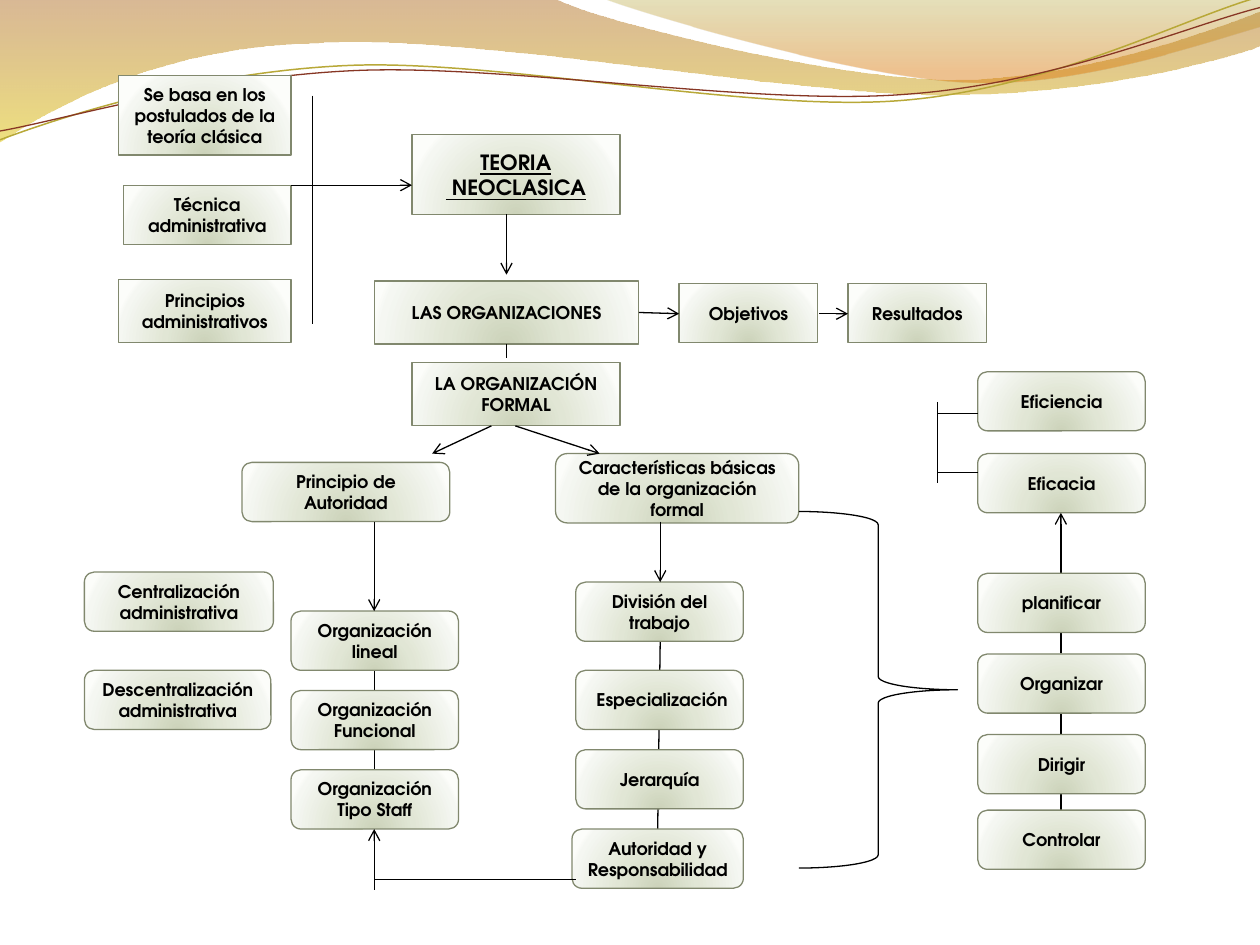
from lxml import etree
from pptx import Presentation
from pptx.dml.color import RGBColor
from pptx.enum.shapes import MSO_CONNECTOR, MSO_SHAPE
from pptx.enum.text import MSO_ANCHOR, MSO_AUTO_SIZE, PP_ALIGN
from pptx.oxml import parse_xml
from pptx.oxml.ns import qn
from pptx.util import Inches, Pt

RECT, ROUNDED, BRACE = MSO_SHAPE.RECTANGLE, MSO_SHAPE.ROUNDED_RECTANGLE, MSO_SHAPE.RIGHT_BRACE
STRAIGHT = MSO_CONNECTOR.STRAIGHT
MIDDLE, CENTER, NO_AUTOFIT = MSO_ANCHOR.MIDDLE, PP_ALIGN.CENTER, MSO_AUTO_SIZE.NONE
FONT = "TeX Gyre Adventor"
NS = 'xmlns:a="http://schemas.openxmlformats.org/drawingml/2006/main"'
DOWNWARD = '<a:lin ang="5400000" scaled="0"/>'
FROM_BELOW = '<a:path path="circle"><a:fillToRect l="50000" t="130000" r="50000" b="-30000"/></a:path>'
BOX_STOPS = [(0, "CCD3BA", 100), (43, "E1E6D5", 100), (93, "F5F7F2", 100), (100, "FCFDFA", 100)]


def fill_gradient(shape, stops, direction):
    shape.fill.background()
    stop_xml = "".join(
        f'<a:gs pos="{pos * 1000}"><a:srgbClr val="{color}"><a:alpha val="{alpha * 1000}"/></a:srgbClr></a:gs>'
        for pos, color, alpha in stops)
    no_fill = shape._element.spPr.find(qn("a:noFill"))
    no_fill.getparent().replace(no_fill, parse_xml(
        f'<a:gradFill {NS} rotWithShape="1"><a:gsLst>{stop_xml}</a:gsLst>{direction}</a:gradFill>'))


def format_box(shape, paragraphs, size, underline=False):
    fill_gradient(shape, BOX_STOPS, FROM_BELOW)
    shape.line.color.rgb = RGBColor.from_string("81886E")
    shape.line.width = Pt(0.75)
    shape.shadow.inherit = False
    frame = shape.text_frame
    frame.word_wrap = True
    frame.auto_size = NO_AUTOFIT
    frame.vertical_anchor = MIDDLE
    for index, text in enumerate(paragraphs):
        paragraph = frame.add_paragraph() if index else frame.paragraphs[0]
        paragraph.alignment = CENTER
        run = paragraph.add_run()
        run.text = text
        run.font.name = FONT
        run.font.size = Pt(size)
        run.font.bold = True
        run.font.underline = underline
        run.font.color.rgb = RGBColor.from_string("000000")


prs = Presentation()
prs.slide_width, prs.slide_height = Inches(10), Inches(7.5)
slide = prs.slides.add_slide(prs.slide_layouts[5])
shapes = slide.shapes

left_wave = [
    (0, 0), (4.4, -0.01),
    (4.76, 0.17, 6.64, 0.63, 7.58, 0.63), (8.53, 0.63, 9.58, 0.26, 10, 0.09), (10.01, 0.36),
    (9.83, 0.44, 8.7, 0.76, 7.46, 0.75), (6.22, 0.75, 3.82, 0.28, 2.57, 0.34),
    (1.29, 0.36, 0.46, 0.83, -0.01, 1.13)]
right_wave = [(4.79, -0.01), (5.09, 0.11, 6.82, 0.62, 7.69, 0.65), (8.56, 0.69, 9.61, 0.32, 10, 0.21), (10, 0)]
olive_curve = [(0, 1.11), (0.48, 0.93, 1.58, 0.57, 2.77, 0.52), (3.95, 0.47, 5.93, 0.89, 7.13, 0.8),
               (8.33, 0.71, 9.38, 0.15, 9.98, -0.02)]
red_curve = [(0, 1.04), (0.47, 0.96, 1.64, 0.61, 2.83, 0.56), (4.03, 0.51, 5.97, 0.84, 7.17, 0.75),
             (8.36, 0.67, 9.41, 0.21, 10, 0.06)]
waves = [
    (left_wave, [(0, "AB6415", 45), (100, "E1C716", 55)], None, 0),
    (right_wave, [(0, "AA991F", 30), (80, "DB780A", 45)], None, 0),
    (olive_curve, None, "B8A838", 0.85),
    (red_curve, None, "873624", 0.75),
]
for steps, stops, color, width in waves:
    corners = [(Inches(step[i]), Inches(step[i + 1])) for step in steps for i in range(0, len(step), 2)]
    builder = shapes.build_freeform(*corners[0])
    builder.add_line_segments(corners[1:], close=bool(stops))
    wave = builder.convert_to_shape()
    segments = iter(list(wave._element.spPr.iter(qn("a:lnTo"))))
    for step in steps[1:]:
        segment = next(segments)
        if len(step) == 6:
            segment.tag = qn("a:cubicBezTo")
            for control in (next(segments), next(segments)):
                segment.append(control[0])
                control.getparent().remove(control)
    wave.shadow.inherit = False
    if stops:
        fill_gradient(wave, stops, DOWNWARD)
        wave.line.fill.background()
    else:
        wave.fill.background()
        wave.line.color.rgb = RGBColor.from_string(color)
        wave.line.width = Pt(width)

links_behind = [(2.97, 5.32, 2.97, 6.11, False), (5.24, 5.09, 5.22, 6.58, False), (8.42, 6.43, 8.42, 4.07, True)]
links_in_front = [
    (7.44, 3.19, 7.44, 3.83, False), (7.44, 3.28, 7.76, 3.28, False), (7.44, 3.75, 7.76, 3.75, False),
    (5.24, 4.14, 5.24, 4.62, True), (2.97, 7.06, 2.97, 6.58, True), (2.97, 6.98, 4.57, 6.98, False),
    (2.97, 4.14, 2.97, 4.85, True), (3.9, 3.38, 3.43, 3.6, True), (4.09, 3.38, 4.76, 3.6, True),
    (4.02, 1.7, 4.02, 2.18, True), (4.02, 2.73, 4.02, 2.84, False), (5.07, 2.48, 5.39, 2.49, True),
    (6.5, 2.49, 6.73, 2.49, True), (2.31, 1.47, 3.27, 1.47, True), (2.48, 0.76, 2.48, 2.57, False),
]
boxes = [
    (RECT, 0.94, 0.6, 1.37, 0.63, "Se basa en los postulados de la teoría clásica"),
    (RECT, 0.98, 1.47, 1.33, 0.47, "Técnica administrativa"),
    (RECT, 0.94, 2.22, 1.37, 0.5, "Principios administrativos"),
    (RECT, 2.97, 2.23, 2.1, 0.5, "LAS ORGANIZACIONES"),
    (RECT, 5.39, 2.25, 1.1, 0.47, "Objetivos"),
    (RECT, 6.73, 2.25, 1.1, 0.47, "Resultados"),
    (RECT, 3.27, 2.88, 1.65, 0.5, "LA ORGANIZACIÓN FORMAL"),
    (ROUNDED, 1.92, 3.67, 1.65, 0.47, "Principio de Autoridad"),
    (ROUNDED, 4.41, 3.6, 1.93, 0.55, "Características básicas de la organización formal"),
    (ROUNDED, 0.67, 4.54, 1.5, 0.47, "Centralización administrativa"),
    (ROUNDED, 0.67, 5.32, 1.48, 0.47, "Descentralización administrativa"),
    (ROUNDED, 4.54, 6.58, 1.36, 0.47, "Autoridad y Responsabilidad"),
]
columns = [
    (2.31, [(4.85, "Organización lineal"), (5.48, "Organización Funcional"), (6.11, "Organización Tipo Staff")]),
    (4.57, [(4.62, "División del trabajo"), (5.32, " Especialización"), (5.95, "Jerarquía")]),
    (7.76, [(2.95, "Eficiencia"), (3.6, "Eficacia"), (4.55, "planificar"), (5.19, "Organizar"),
            (5.83, "Dirigir"), (6.43, "Controlar")]),
]
boxes += [(ROUNDED, left, top, 1.33, 0.47, text) for left, column in columns for top, text in column]

title = shapes.title
title.left, title.top, title.width, title.height = Inches(3.27), Inches(1.07), Inches(1.65), Inches(0.63)
format_box(title, ["TEORIA", " NEOCLASICA"], 12, underline=True)

for links, next_boxes in ((links_behind, boxes), (links_in_front, [])):
    for x1, y1, x2, y2, has_arrow in links:
        link = shapes.add_connector(STRAIGHT, Inches(x1), Inches(y1), Inches(x2), Inches(y2))
        link.line.color.rgb = RGBColor.from_string("000000")
        link.line.width = Pt(0.75)
        if has_arrow:
            etree.SubElement(link.line._get_or_add_ln(), qn("a:tailEnd"), type="arrow")
        etree.SubElement(link._element.spPr, qn("a:effectLst"))
    for kind, left, top, width, height, text in next_boxes:
        box = shapes.add_shape(kind, Inches(left), Inches(top), Inches(width), Inches(height))
        format_box(box, [text], 10)

brace = shapes.add_shape(BRACE, Inches(6.34), Inches(4.06), Inches(1.26), Inches(2.83))
brace.shadow.inherit = False
brace.fill.background()
brace.line.color.rgb = RGBColor.from_string("000000")
brace.line.width = Pt(0.75)

prs.save("out.pptx")
